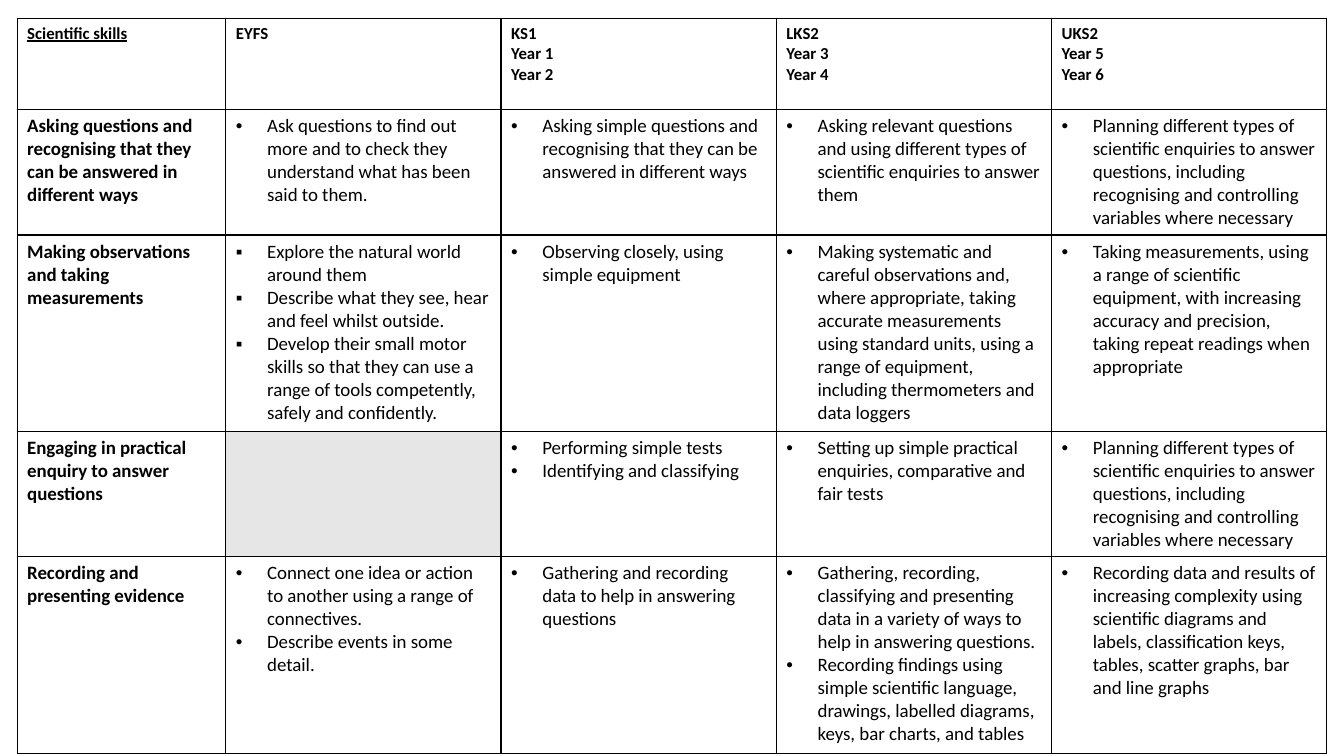
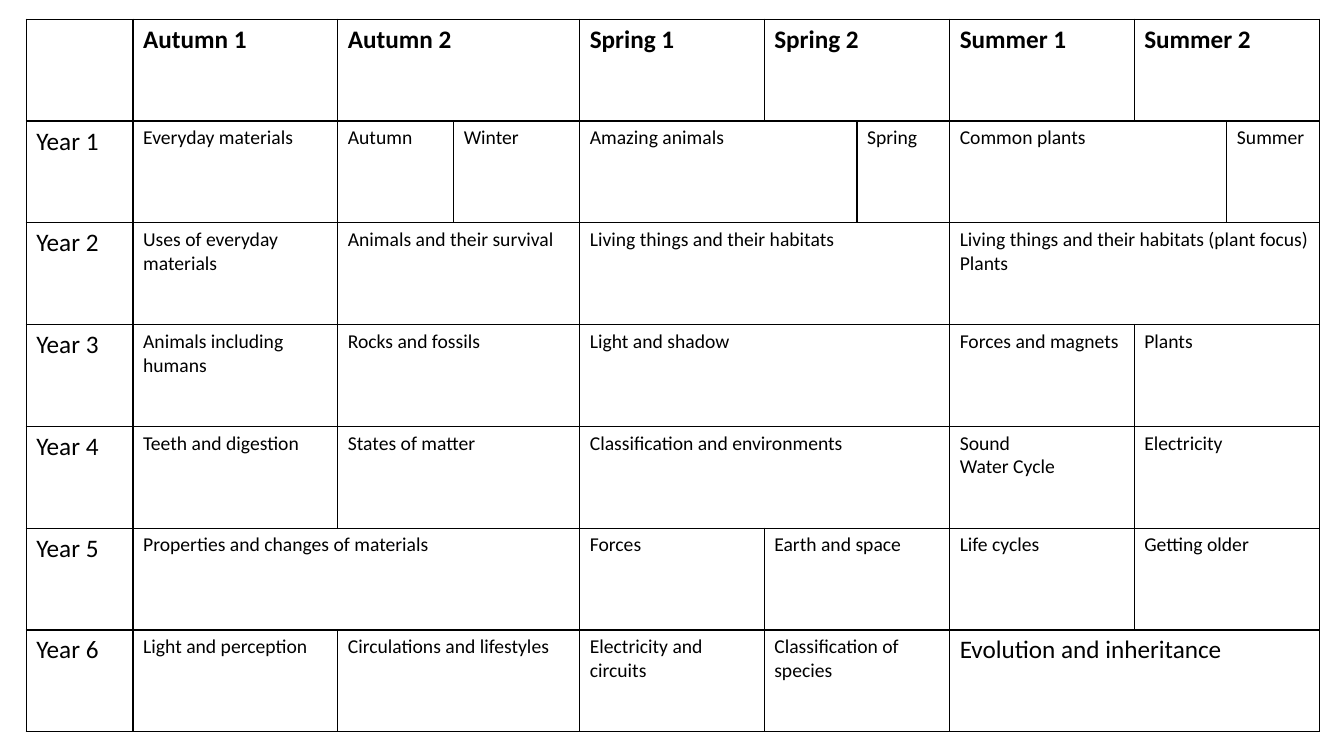
from lxml import etree
from pptx import Presentation
from pptx.dml.color import RGBColor
from pptx.oxml import ns
from pptx.util import Inches, Pt

FONT = "Calibri"
COLORS = {"text": "000000", "line": "000000", "cell": "FFFFFF", "gap": "E7E6E6"}
INDENT = Inches(0.31)

STAGES = ["Scientific skills", "EYFS", "KS1\nYear 1\nYear 2",
          "LKS2\nYear 3\nYear 4", "UKS2\nYear 5\nYear 6"]
PLANNING = ("Planning different types of scientific enquiries to answer questions, "
            "including recognising and controlling variables where necessary")
SKILLS = [
    ["Asking questions and recognising that they can be answered in different ways",
     "Ask questions to find out more and to check they understand what has been "
     "said to them.",
     "Asking simple questions and recognising that they can be answered in different ways",
     "Asking relevant questions and using different types of scientific enquiries "
     "to answer them",
     PLANNING],
    ["Making observations and taking measurements",
     "Explore the natural world around them\n"
     "Describe what they see, hear and feel whilst outside.\n"
     "Develop their small motor skills so that they can use a range of tools "
     "competently, safely and confidently.",
     "Observing closely, using simple equipment",
     "Making systematic and careful observations and, where appropriate, taking "
     "accurate measurements using standard units, using a range of equipment, "
     "including thermometers and data loggers",
     "Taking measurements, using a range of scientific equipment, with increasing "
     "accuracy and precision, taking repeat readings when appropriate"],
    ["Engaging in practical enquiry to answer questions",
     "",
     "Performing simple tests\nIdentifying and classifying",
     "Setting up simple practical enquiries, comparative and fair tests",
     PLANNING],
    ["Recording and presenting evidence",
     "Connect one idea or action to another using a range of connectives.\n"
     "Describe events in some detail.",
     "Gathering and recording data to help in answering questions",
     "Gathering, recording, classifying and presenting data in a variety of ways "
     "to help in answering questions.\n"
     "Recording findings using simple scientific language, drawings, labelled "
     "diagrams, keys, bar charts, and tables",
     "Recording data and results of increasing complexity using scientific diagrams "
     "and labels, classification keys, tables, scatter graphs, bar and line graphs"],
]

# Each entry is a text and the number of columns it covers.
TERMS = [("", 1), ("Autumn 1", 1), ("Autumn 2", 2), ("Spring 1", 1),
         ("Spring 2", 2), ("Summer 1", 1), ("Summer 2", 2)]
TOPICS = [
    [("Everyday materials", 1), ("Autumn", 1), ("Winter", 1), ("Amazing animals", 2),
     ("Spring", 1), ("Common plants", 2), ("Summer", 1)],
    [("Uses of everyday materials", 1), ("Animals and their survival", 2),
     ("Living things and their habitats", 3),
     ("Living things and their habitats (plant focus)\nPlants", 3)],
    [("Animals including humans", 1), ("Rocks and fossils", 2), ("Light and shadow", 3),
     ("Forces and magnets", 1), ("Plants", 2)],
    [("Teeth and digestion", 1), ("States of matter", 2),
     ("Classification and environments", 3), ("Sound\nWater Cycle", 1),
     ("Electricity", 2)],
    [("Properties and changes of materials", 3), ("Forces", 1), ("Earth and space", 2),
     ("Life cycles", 1), ("Getting older", 2)],
    [("Light and perception", 1), ("Circulations and lifestyles", 2),
     ("Electricity and circuits", 1), ("Classification of species", 2),
     ("Evolution and inheritance", 3)],
]


def add_border(cell):
    props = cell._tc.get_or_add_tcPr()
    for side in ("lnL", "lnR", "lnT", "lnB"):
        line = etree.SubElement(props, ns.qn(f"a:{side}"), w=str(Pt(1)))
        fill = etree.SubElement(line, ns.qn("a:solidFill"))
        etree.SubElement(fill, ns.qn("a:srgbClr"), val=COLORS["line"])


def paint(cell, name):
    cell.fill.solid()
    cell.fill.fore_color.rgb = RGBColor.from_string(COLORS[name])


def add_grid(slide, left, top, cols, rows):
    """Add a plain ruled table with the given column widths and row heights."""
    frame = slide.shapes.add_table(len(rows), len(cols), Inches(left), Inches(top),
                                   Inches(sum(cols)), Inches(sum(rows)))
    table = frame.table
    table.first_row = table.horz_banding = False
    for col, width in zip(table.columns, cols):
        col.width = Inches(width)
    for row, height in zip(table.rows, rows):
        row.height = Inches(height)
    for cell in table.iter_cells():
        add_border(cell)
        paint(cell, "cell")
    return table


def add_bullet(para, mark):
    props = para._p.get_or_add_pPr()
    props.set("marL", str(INDENT))
    props.set("indent", str(-INDENT))
    etree.SubElement(props, ns.qn("a:buFont"), typeface="Arial")
    etree.SubElement(props, ns.qn("a:buChar"), char=mark)


def write(cell, words, size, bold=False, under=False, mark=None):
    """Fill a cell, one paragraph a line, with bullets if a mark is given."""
    cell.text = words
    for para in cell.text_frame.paragraphs:
        if mark:
            add_bullet(para, mark)
        font = para.font
        font.name, font.size = FONT, Pt(size)
        font.bold, font.underline = bold, under
        font.color.rgb = RGBColor.from_string(COLORS["text"])


def add_skills(slide):
    table = add_grid(slide, 0.17, 0.18, [2.07] + [2.73] * 4,
                     [0.91] + [1.17, 1.95] * 2)
    for col, stage in enumerate(STAGES):
        write(table.cell(0, col), stage, 12, bold=True, under=col == 0)
    for row, (skill, *aims) in enumerate(SKILLS, 1):
        write(table.cell(row, 0), skill, 13.5, bold=True)
        for col, aim in enumerate(aims, 1):
            cell = table.cell(row, col)
            if aim:
                write(cell, aim, 13.5, mark="▪" if (row, col) == (2, 1) else "•")
            else:
                paint(cell, "gap")


def add_terms(slide):
    season = [1.83, 0.92, 0.92]
    table = add_grid(slide, 0.26, 0.19, [1.06, 2.03, 1.15, 1.25] + season * 2,
                     [1.01] * 7)
    years = [[(f"Year {year}", 1), *topics] for year, topics in enumerate(TOPICS, 1)]
    for row, items in enumerate([TERMS] + years):
        col = 0
        for words, span in items:
            cell = table.cell(row, col)
            if span > 1:
                cell.merge(table.cell(row, col + span - 1))
            large = row == 0 or col == 0 or words == "Evolution and inheritance"
            write(cell, words, 18 if large else 14, bold=row == 0)
            col += span


def main():
    deck = Presentation()
    deck.slide_width, deck.slide_height = Inches(13.33), Inches(7.5)
    blank = deck.slide_layouts[6]
    for build in (add_skills, add_terms):
        build(deck.slides.add_slide(blank))
    deck.save("out.pptx")


if __name__ == "__main__":
    main()
